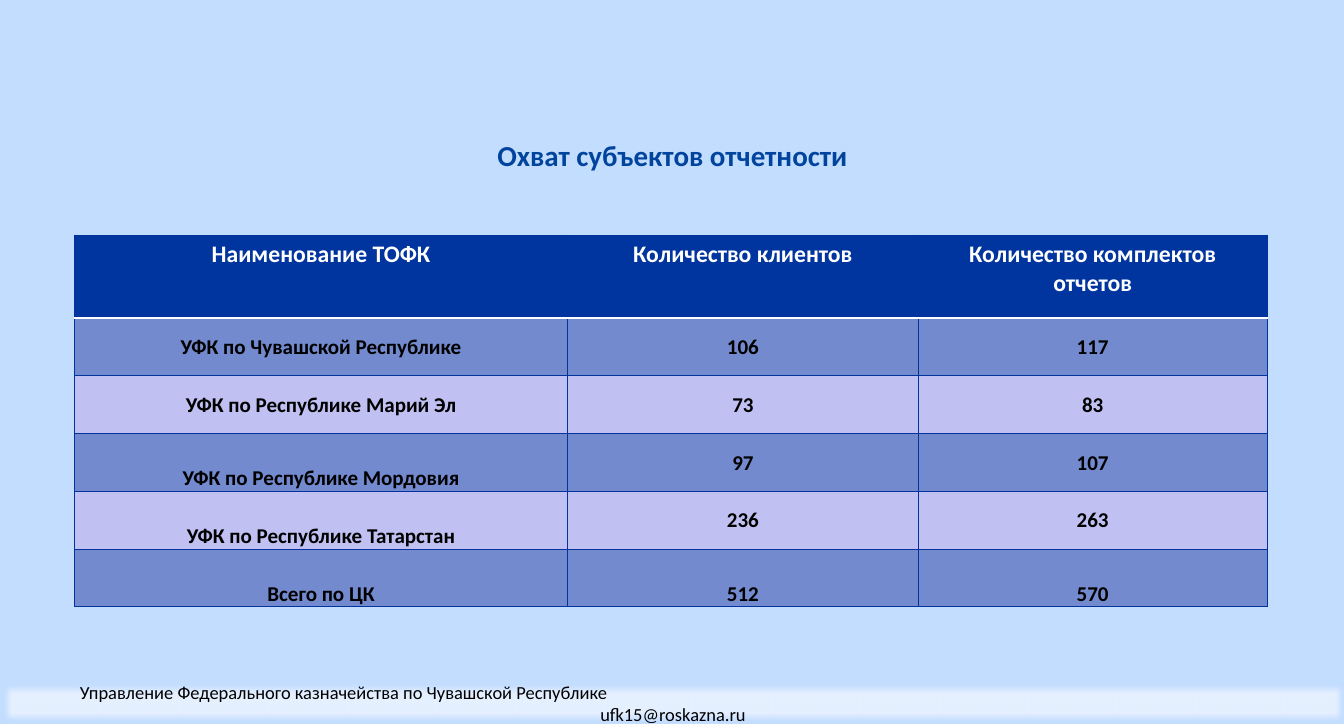
import dataclasses

import pptx
import pptx.dml.color
import pptx.enum.shapes
import pptx.enum.text
import pptx.oxml
import pptx.oxml.ns
import pptx.util
from pptx.util import Cm

ANCHOR = pptx.enum.text.MSO_ANCHOR
ALIGN = pptx.enum.text.PP_ALIGN


@dataclasses.dataclass(frozen=True)
class Theme:
    font: str = "Calibri"
    page: str = "C3DDFF"
    title: str = "00449E"
    header: str = "00349E"
    border: str = "00339B"
    dark_row: str = "738ACF"
    light_row: str = "C0C0F2"
    footer: str = "E5F0FF"
    white: str = "FFFFFF"
    black: str = "000000"
    title_size: int = 22
    header_size: int = 18
    body_size: int = 16
    footer_size: int = 14


THEME = Theme()
HEADINGS = ("Наименование ТОФК", "Количество клиентов", "Количество комплектов отчетов")
OFFICES = (
    ("УФК по Чувашской Республике", "106", "117"),
    ("УФК по Республике Марий Эл", "73", "83"),
    ("УФК по Республике Мордовия", "97", "107"),
    ("УФК по Республике Татарстан", "236", "263"),
    ("Всего по ЦК", "512", "570"),
)
LABEL_ANCHORS = (ANCHOR.MIDDLE, ANCHOR.MIDDLE, ANCHOR.BOTTOM, ANCHOR.BOTTOM, ANCHOR.BOTTOM)
COLUMN_WIDTHS = (Cm(13.21), Cm(9.4), Cm(9.35))
HEADER_HEIGHT = Cm(2.22)
ROW_HEIGHT = Cm(1.55)


def paint(fill, color):
    fill.solid()
    fill.fore_color.rgb = pptx.dml.color.RGBColor.from_string(color)


def write(para, text, size, color, bold=False, align=ALIGN.CENTER):
    para.alignment = align
    span = para.add_run()
    span.text = text
    span.font.name = THEME.font
    span.font.size = pptx.util.Pt(size)
    span.font.bold = bold
    span.font.color.rgb = pptx.dml.color.RGBColor.from_string(color)


def add_title(page, text):
    title = page.shapes.title
    title.left, title.top, title.width, title.height = Cm(6.68), Cm(3.44), Cm(22.68), Cm(1.42)
    frame = title.text_frame
    frame.auto_size = pptx.enum.text.MSO_AUTO_SIZE.NONE
    frame.vertical_anchor = ANCHOR.MIDDLE
    write(frame.paragraphs[0], text, THEME.title_size, THEME.title, bold=True)


def set_border(cell, side, color, points):
    properties = cell._tc.get_or_add_tcPr()
    properties.append(pptx.oxml.parse_xml(
        f'<a:ln{side} {pptx.oxml.ns.nsdecls("a")} w="{pptx.util.Pt(points)}">'
        f'<a:solidFill><a:srgbClr val="{color}"/></a:solidFill></a:ln{side}>'
    ))


def fill_cell(cell, text, size, color, background, anchor, margins, edges):
    cell.margin_left = cell.margin_right = margins[0]
    cell.margin_top, cell.margin_bottom = margins[1:]
    cell.vertical_anchor = anchor
    for side in "LRTB":
        set_border(cell, side, *edges.get(side, (THEME.border, 0.75)))
    paint(cell.fill, background)
    write(cell.text_frame.paragraphs[0], text, size, color, bold=True)


def add_coverage_table(page):
    height = HEADER_HEIGHT + ROW_HEIGHT * len(OFFICES)
    table = page.shapes.add_table(
        len(OFFICES) + 1, len(HEADINGS), Cm(2), Cm(6.3), sum(COLUMN_WIDTHS), height
    ).table
    table.first_row = table.horz_banding = False
    for column, width in zip(table.columns, COLUMN_WIDTHS):
        column.width = width
    for row in table.rows:
        row.height = ROW_HEIGHT
    table.rows[0].height = HEADER_HEIGHT

    divider = (THEME.white, 2)
    for column, heading in enumerate(HEADINGS):
        fill_cell(table.cell(0, column), heading, THEME.header_size, THEME.white, THEME.header,
                  ANCHOR.TOP, (Cm(0.36), Cm(0.13), Cm(0.13)), {"B": divider})
    for row, (office, label_anchor) in enumerate(zip(OFFICES, LABEL_ANCHORS), start=1):
        background = THEME.dark_row if row % 2 else THEME.light_row
        edges = {"T": divider} if row == 1 else {}
        value_anchor = ANCHOR.BOTTOM if row == len(OFFICES) else ANCHOR.MIDDLE
        for column, text in enumerate(office):
            anchor = value_anchor if column else label_anchor
            fill_cell(table.cell(row, column), text, THEME.body_size, THEME.black, background,
                      anchor, (Cm(0.03), Cm(0.03), Cm(0)), edges)


def add_footer(page, organisation, email):
    box = page.shapes.add_shape(
        pptx.enum.shapes.MSO_SHAPE.RECTANGLE, Cm(0.03), Cm(18.31), Cm(36.02), Cm(1.09)
    )
    box.shadow.inherit = False
    effects = box._element.spPr.find(pptx.oxml.ns.qn("a:effectLst"))
    effects.append(pptx.oxml.parse_xml(
        f'<a:softEdge {pptx.oxml.ns.nsdecls("a")} rad="{Cm(0.18)}"/>'
    ))
    paint(box.fill, THEME.footer)
    box.line.fill.background()
    frame = box.text_frame
    frame.word_wrap = True
    frame.vertical_anchor = ANCHOR.MIDDLE
    name_para = frame.paragraphs[0]
    name_para._p.get_or_add_pPr().set("marL", str(Cm(1.86)))
    write(name_para, organisation, THEME.footer_size, THEME.black, align=ALIGN.LEFT)
    write(frame.add_paragraph(), email, THEME.footer_size, THEME.black)


def main():
    deck = pptx.Presentation()
    deck.slide_width, deck.slide_height = Cm(36.02), Cm(19.41)
    page = deck.slides.add_slide(deck.slide_layouts[5])
    paint(page.background.fill, THEME.page)
    add_title(page, "Охват субъектов отчетности")
    add_coverage_table(page)
    add_footer(page, "Управление Федерального казначейства по Чувашской Республике",
               "ufk15@roskazna.ru")
    deck.save("out.pptx")


if __name__ == "__main__":
    main()
